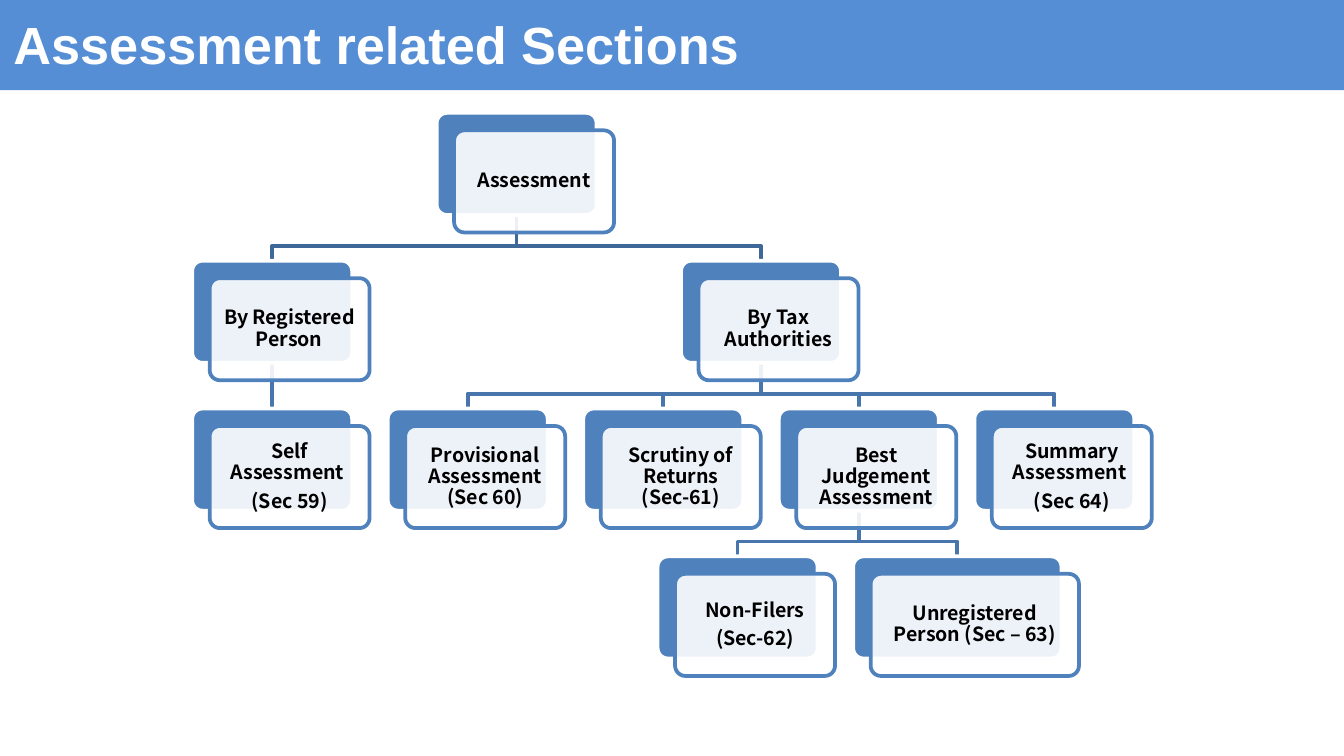
from dataclasses import dataclass

from lxml.etree import SubElement
from pptx import Presentation
from pptx.dml.color import RGBColor
from pptx.enum.shapes import MSO_CONNECTOR, MSO_SHAPE
from pptx.enum.text import MSO_ANCHOR, PP_ALIGN
from pptx.oxml.ns import qn
from pptx.util import Inches, Pt

WHITE = RGBColor(0xFF, 0xFF, 0xFF)
BLACK = RGBColor(0x00, 0x00, 0x00)
BANNER_BLUE = RGBColor(0x55, 0x8E, 0xD5)
BOX_BLUE = RGBColor(0x4F, 0x81, 0xBD)
TOP_LINK = RGBColor(0x3F, 0x67, 0x97)
LOWER_LINK = RGBColor(0x48, 0x75, 0xAC)

SLIDE_WIDTH = 10
SLIDE_HEIGHT = SLIDE_WIDTH * 9 / 16
TREE_LEFT, TREE_TOP = 1.43, 0.84
TREE_WIDTH, TREE_HEIGHT = 5.82, 3.3
COLUMN_PITCH, ROW_PITCH = TREE_WIDTH / 4, TREE_HEIGHT / 3
BOX_WIDTH, BOX_HEIGHT = 1.19, 0.76
WIDE_BOX = 1.55
CARD_SHIFT = 0.13
LINK_BEND = 0.23


@dataclass
class Node:
    """A box of the tree, placed by column and row."""
    text: str
    column: float
    row: int
    parent: str = ""
    width: float = BOX_WIDTH

    @property
    def left(self):
        """Left edge in inches."""
        return TREE_LEFT + self.column * COLUMN_PITCH

    @property
    def top(self):
        """Top edge in inches."""
        return TREE_TOP + self.row * ROW_PITCH

    @property
    def center(self):
        """Horizontal middle in inches."""
        return self.left + self.width / 2


NODES = {
    "root": Node("Assessment", 1.25, 0),
    "person": Node("By Registered Person\t", 0, 1, "root"),
    "tax": Node("By Tax Authorities", 2.5, 1, "root"),
    "self": Node("Self Assessment \n(Sec 59)", 0, 2, "person"),
    "provisional": Node("Provisional Assessment (Sec 60)", 1, 2, "tax"),
    "scrutiny": Node("Scrutiny of Returns (Sec-61)", 2, 2, "tax"),
    "best": Node("Best Judgement Assessment", 3, 2, "tax"),
    "summary": Node("Summary Assessment \n(Sec 64)", 4, 2, "tax"),
    "non_filers": Node("Non-Filers\n(Sec-62)", 2.38, 3, "best"),
    "unregistered": Node("Unregistered Person (Sec – 63)", 3.38, 3, "best", WIDE_BOX),
}


def add_banner(slide, left, top, width, height):
    """Turn the title placeholder into the banner."""
    title = slide.shapes.title
    title.left, title.top = Inches(left), Inches(top)
    title.width, title.height = Inches(width), Inches(height)
    title.fill.solid()
    title.fill.fore_color.rgb = BANNER_BLUE
    frame = title.text_frame
    frame.text = "Assessment related Sections"
    frame.vertical_anchor = MSO_ANCHOR.MIDDLE
    paragraph = frame.paragraphs[0]
    paragraph.alignment = PP_ALIGN.LEFT
    font = paragraph.runs[0].font
    font.name, font.size, font.bold = "Arial", Pt(28), True
    font.color.rgb = WHITE


def add_link(slide, parent, child):
    """Join the bottom of the parent to the top of the child."""
    start = parent.top + BOX_HEIGHT
    bend = start + LINK_BEND
    if parent.center == child.center:
        link = slide.shapes.add_connector(
            MSO_CONNECTOR.STRAIGHT, Inches(parent.center), Inches(start),
            Inches(child.center), Inches(child.top))
        SubElement(link._element.spPr, qn("a:effectLst"))
    else:
        builder = slide.shapes.build_freeform(Inches(parent.center), Inches(start))
        corners = [(parent.center, bend), (child.center, bend), (child.center, child.top)]
        builder.add_line_segments([(Inches(x), Inches(y)) for x, y in corners], close=False)
        link = builder.convert_to_shape()
        link.fill.background()
        link.shadow.inherit = False
    link.line.color.rgb = TOP_LINK if parent.row == 0 else LOWER_LINK
    link.line.width = Pt(2)


def add_panel(slide, left, top, width, fill, line):
    """Add one rounded panel and return it."""
    panel = slide.shapes.add_shape(
        MSO_SHAPE.ROUNDED_RECTANGLE, Inches(left), Inches(top),
        Inches(width), Inches(BOX_HEIGHT))
    panel.adjustments[0] = 0.1
    panel.shadow.inherit = False
    panel.fill.solid()
    panel.fill.fore_color.rgb = fill
    panel.line.color.rgb = line
    panel.line.width = Pt(2)
    return panel


def add_node(slide, node):
    """Add the backing panel and the translucent card with its label."""
    add_panel(slide, node.left, node.top, node.width, BOX_BLUE, WHITE)
    card = add_panel(slide, node.left + CARD_SHIFT, node.top + CARD_SHIFT,
                     node.width, WHITE, BOX_BLUE)
    color = card._element.spPr.find(qn("a:solidFill")).find(qn("a:srgbClr"))
    SubElement(color, qn("a:alpha"), val="90000")
    frame = card.text_frame
    frame.text = node.text
    frame.word_wrap = True
    frame.vertical_anchor = MSO_ANCHOR.MIDDLE
    frame.margin_left = frame.margin_right = Inches(0.05)
    frame.margin_top = frame.margin_bottom = Inches(0.05)
    for paragraph in frame.paragraphs:
        paragraph.alignment = PP_ALIGN.CENTER
        paragraph.line_spacing = 0.9
        paragraph.space_after = Pt(3.7)
        font = paragraph.runs[0].font
        font.name, font.size, font.bold = "Noto Sans CJK KR", Pt(10.5), True
        font.color.rgb = BLACK


def add_tree(slide, nodes):
    """Draw all links, then all boxes over them."""
    for node in nodes.values():
        if node.parent:
            add_link(slide, nodes[node.parent], node)
    for node in nodes.values():
        add_node(slide, node)


def main():
    """Build and save the slide."""
    presentation = Presentation()
    presentation.slide_width = Inches(SLIDE_WIDTH)
    presentation.slide_height = Inches(SLIDE_HEIGHT)
    slide = presentation.slides.add_slide(presentation.slide_layouts[5])
    add_banner(slide, 0, -0.02, SLIDE_WIDTH, 0.69)
    add_tree(slide, NODES)
    presentation.save("out.pptx")


if __name__ == "__main__":
    main()
